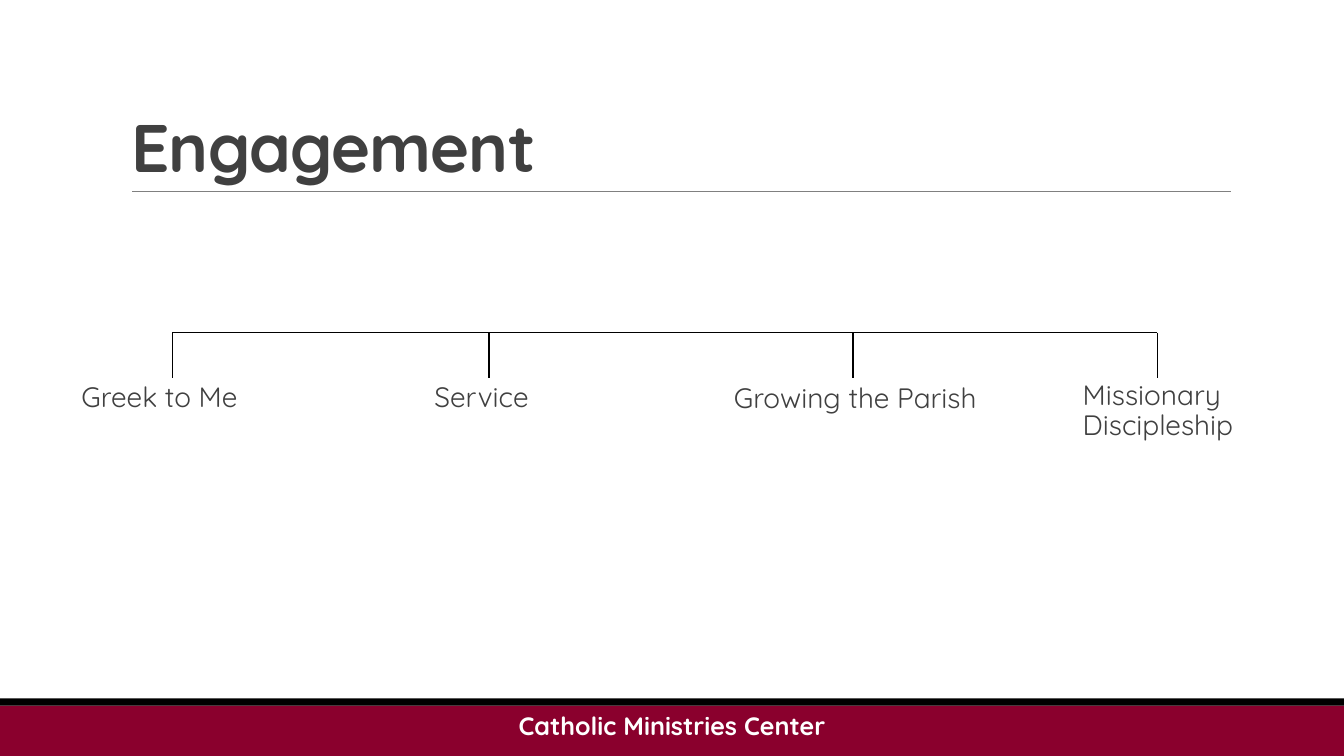
"""Build the Engagement slide: four programmes hanging from one bracket."""
from dataclasses import dataclass

from lxml import etree
from pptx import Presentation
from pptx.dml.color import RGBColor
from pptx.enum import shapes, text
from pptx.oxml import ns
from pptx.util import Inches, Pt


@dataclass(frozen=True)
class Theme:
    """Colours, font and type sizes."""
    font: str = "Quicksand"
    ink: str = "404040"
    rule: str = "808080"
    black: str = "000000"
    white: str = "FFFFFF"
    wine: str = "8A002D"
    title: int = 48
    label: int = 20
    foot: int = 18


THEME = Theme()
BAR_Y, DROP_Y = 3.3, 3.75
STEMS = (1.71, 4.85, 8.46, 11.48)
LABELS = (
    ("Greek to Me", 0.71, 3.75, 2),
    ("Service", 4.21, 3.75, 1.18),
    ("Growing the Parish", 7.18, 3.76, 2.7),
    ("Missionary Discipleship", 10.64, 3.73, 2.6),
)


def style(para, size, color, bold=False):
    """Set the font of a paragraph."""
    font = para.font
    font.name, font.size, font.bold = THEME.font, Pt(size), bold
    font.color.rgb = RGBColor.from_string(color)


def add_line(slide, x1, y1, x2, y2, color=THEME.black, width=1):
    """Draw a straight line without shadow."""
    line = slide.shapes.add_connector(
        shapes.MSO_CONNECTOR.STRAIGHT, Inches(x1), Inches(y1), Inches(x2), Inches(y2))
    line.line.color.rgb = RGBColor.from_string(color)
    line.line.width = Pt(width)
    etree.SubElement(line._element.spPr, ns.qn("a:effectLst"))


def add_band(slide, y, height, color):
    """Draw a full-width band."""
    band = slide.shapes.add_shape(
        shapes.MSO_SHAPE.RECTANGLE, 0, Inches(y), Inches(13.33), Inches(height))
    band.shadow.inherit = False
    band.fill.solid()
    band.fill.fore_color.rgb = RGBColor.from_string(color)
    band.line.fill.background()


def add_text(slide, words, x, y, width, height):
    """Add a wrapping text box and return its frame."""
    box = slide.shapes.add_textbox(Inches(x), Inches(y), Inches(width), Inches(height))
    box.text_frame.word_wrap = True
    box.text_frame.text = words
    return box.text_frame


def add_label(slide, words, x, y, width):
    """Add the name of one programme."""
    frame = add_text(slide, words, x, y, width, 0.45)
    frame.margin_right = 0
    para = frame.paragraphs[0]
    para.line_spacing = 0.9
    para.space_after = Pt(2)
    style(para, THEME.label, THEME.ink)


def add_title(slide, words):
    """Place and format the title, with its rule below."""
    title = slide.shapes.title
    title.left, title.top = Inches(1.2), Inches(0.31)
    title.width, title.height = Inches(11), Inches(1.59)
    frame = title.text_frame
    frame.text = words
    frame.vertical_anchor = text.MSO_ANCHOR.BOTTOM
    frame.auto_size = text.MSO_AUTO_SIZE.NONE
    para = frame.paragraphs[0]
    para.alignment = text.PP_ALIGN.LEFT
    para.line_spacing = 0.85
    style(para, THEME.title, THEME.ink, True)
    para.runs[0].font._element.set("spc", "-50")
    add_line(slide, 1.31, 1.9, 12.21, 1.9, THEME.rule, 0.5)


def add_footer(slide, words):
    """Add the two bands and the centred footer text."""
    add_band(slide, 7, 0.5, THEME.wine)
    add_band(slide, 6.93, 0.07, THEME.black)
    para = add_text(slide, words, 4.72, 7, 3.89, 0.4).paragraphs[0]
    para.alignment = text.PP_ALIGN.CENTER
    style(para, THEME.foot, THEME.white, True)


def main():
    """Build and save the slide."""
    deck = Presentation()
    deck.slide_width, deck.slide_height = Inches(13.33), Inches(7.5)
    slide = deck.slides.add_slide(deck.slide_layouts[5])
    add_footer(slide, "Catholic Ministries Center")
    add_title(slide, "Engagement")
    add_line(slide, STEMS[0], BAR_Y, STEMS[-1], BAR_Y)
    for x in STEMS:
        add_line(slide, x, BAR_Y, x, DROP_Y)
    for label in LABELS:
        add_label(slide, *label)
    deck.save("out.pptx")


if __name__ == "__main__":
    main()
